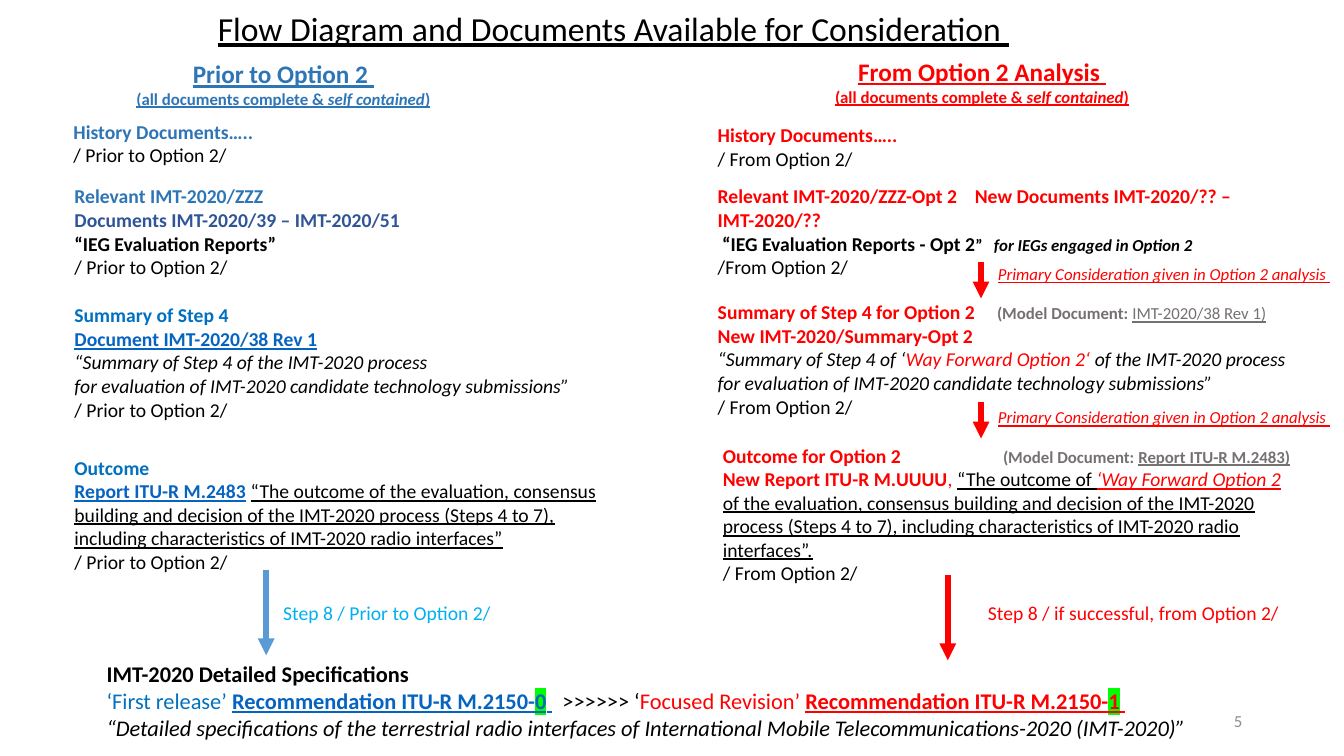
from lxml import etree
from pptx import Presentation
from pptx.dml.color import RGBColor
from pptx.enum.shapes import MSO_CONNECTOR
from pptx.enum.text import MSO_ANCHOR, MSO_AUTO_SIZE, PP_ALIGN
from pptx.oxml.ns import qn
from pptx.util import Pt

PX = 9144  # one px is a hundredth of an inch
LEFT, CENTER, RIGHT = PP_ALIGN.LEFT, PP_ALIGN.CENTER, PP_ALIGN.RIGHT
MIDDLE = MSO_ANCHOR.MIDDLE
GROW = MSO_AUTO_SIZE.SHAPE_TO_FIT_TEXT
STRAIGHT = MSO_CONNECTOR.STRAIGHT

BLACK, RED, GREY, PALE_GREY = "000000", "FF0000", "767171", "8C8C8C"
STEEL, NAVY, BLUE, LINK = "2E75B6", "2F5597", "0070C0", "0563C1"
SKY, ARROW_BLUE, GREEN = "00B0F0", "5B9BD5", "00FF00"

PRIOR = "/ Prior to Option 2/"
FROM = "/ From Option 2/"
MODEL = "\t(Model Document: "


def px(value):
    return value * PX


def rgb(code):
    return RGBColor.from_string(code)


def set_font(font, size=None, color=None, bold=None, italic=None, underline=None):
    if size:
        font.size = Pt(size)
    if color:
        font.color.rgb = rgb(color)
    if bold is not None:
        font.bold = bold
    if italic is not None:
        font.italic = italic
    if underline is not None:
        font.underline = underline


def highlight(span, code):
    """Mark a span whose font colour is already set."""
    fill = span._r.get_or_add_rPr().find(qn("a:solidFill"))
    mark = etree.Element(qn("a:highlight"))
    etree.SubElement(mark, qn("a:srgbClr"), val=code)
    fill.addnext(mark)


def set_tab(para, position):
    properties = para._p.get_or_add_pPr()
    stops = etree.Element(qn("a:tabLst"))
    etree.SubElement(stops, qn("a:tab"), pos=str(px(position)), algn="l")
    properties.insert(0, stops)


def line(*spans, tab=None, **style):
    """One paragraph: its style, its tab stop and spans of text or (text, style)."""
    return spans, tab, style


def fill_para(para, content, size, align):
    spans, tab, style = content
    para.alignment = align
    para.font.name = "Calibri"
    set_font(para.font, **{"size": size, "color": BLACK, **style})
    if tab:
        set_tab(para, tab)
    for item in spans:
        text, changes = (item, {}) if isinstance(item, str) else item
        changes = dict(changes)
        mark = changes.pop("mark", None)
        span = para.add_run()
        span.text = text
        set_font(span.font, **changes)
        if mark:
            highlight(span, mark)


def add_text(page, left, top, width, height, lines, size=14, align=LEFT, wrap=True):
    box = page.shapes.add_textbox(px(left), px(top), px(width), px(height))
    frame = box.text_frame
    frame.word_wrap = wrap
    frame.auto_size = GROW
    for index, content in enumerate(lines):
        para = frame.add_paragraph() if index else frame.paragraphs[0]
        fill_para(para, content, size, align)


def add_arrow(page, x, top, bottom, color):
    arrow = page.shapes.add_connector(STRAIGHT, px(x), px(top), px(x), px(bottom))
    arrow.line.color.rgb = rgb(color)
    arrow.line.width = Pt(4)
    etree.SubElement(arrow.line._get_or_add_ln(), qn("a:tailEnd"), type="triangle")
    etree.SubElement(arrow._element.spPr, qn("a:effectLst"))


def add_title(page, text):
    title = page.shapes.title
    title.left, title.top, title.width, title.height = map(px, (206, 2, 951, 57))
    title.text_frame.vertical_anchor = MIDDLE
    para = title.text_frame.paragraphs[0]
    para.line_spacing = 0.9
    fill_para(para, line(text, underline=True), 24, LEFT)


def add_heading(page, left, top, text, color):
    style = dict(color=color, bold=True, underline=True)
    add_text(page, left, top, 316, 61, [
        line(text, size=18, **style),
        line("(all documents complete & ", ("self contained", dict(italic=True)), ")",
             size=12, **style),
    ], align=CENTER, wrap=False)


def add_prior_column(page):
    add_heading(page, 123, 53, "Prior to Option 2 ", STEEL)
    add_text(page, 63, 114, 220, 57, [
        line("History Documents…..", color=STEEL, bold=True), line(PRIOR)])
    add_text(page, 64, 178, 485, 104, [
        line("Relevant IMT-2020/ZZZ", color=STEEL, bold=True),
        line("Documents IMT-2020/39 – IMT-2020/51", color=NAVY, bold=True),
        line("“IEG Evaluation Reports”", bold=True),
        line(PRIOR)])
    add_text(page, 64, 296, 557, 128, [
        line("Summary of Step 4", color=BLUE, bold=True),
        line("Document IMT-2020/38 Rev 1", color=LINK, bold=True, underline=True),
        line("“Summary of Step 4 of the IMT-2020 process", italic=True),
        line("for evaluation of IMT-2020 candidate technology submissions”", italic=True),
        line(PRIOR)])
    add_text(page, 64, 447, 557, 128, [
        line("Outcome", color=BLUE, bold=True),
        line(("Report ITU-R M.2483", dict(color=LINK, bold=True, underline=True)), " ",
             ("“The outcome of the evaluation, consensus building and decision of the "
              "IMT-2020 process (Steps 4 to 7), including characteristics of IMT-2020 "
              "radio interfaces”", dict(underline=True))),
        line(PRIOR)])
    add_arrow(page, 264, 565, 650, ARROW_BLUE)
    add_text(page, 271, 591, 228, 34,
             [line("Step 8 / Prior to Option 2/", color=SKY)], wrap=False)


def add_option_column(page):
    red_bold = dict(color=RED, bold=True)
    model = dict(size=12, color=GREY, bold=True)
    add_heading(page, 816, 51, "From Option 2 Analysis ", RED)
    add_text(page, 702, 117, 220, 57, [
        line("History Documents…..", **red_bold), line(FROM)])
    add_text(page, 702, 178, 540, 104, [
        line("Relevant IMT-2020/ZZZ-Opt 2\tNew Documents IMT-2020/?? – IMT-2020/??",
             tab=255, **red_bold),
        line(" “IEG Evaluation Reports - Opt 2", ("”\t", dict(size=12)),
             ("for IEGs engaged in Option 2", dict(size=12, italic=True)),
             tab=274, bold=True),
        line("/From Option 2/")])
    add_text(page, 702, 293, 602, 128, [
        line("Summary of Step 4 for Option 2", (MODEL, model),
             ("IMT-2020/38 Rev 1)", {**model, "bold": False, "underline": True}),
             tab=277, **red_bold),
        line("New IMT-2020/Summary-Opt 2", **red_bold),
        line("“Summary of Step 4 of ‘", ("Way Forward Option 2‘ ", dict(color=RED)),
             "of the IMT-2020 process for evaluation of IMT-2020 candidate technology "
             "submissions”", italic=True),
        line(FROM)])
    add_text(page, 707, 435, 591, 151, [
        line("Outcome for Option 2", (MODEL, model),
             ("Report ITU-R M.2483)", {**model, "underline": True}),
             tab=278, **red_bold),
        line(("New Report ITU-R M.UUUU", {**red_bold, "underline": False}),
             (", ", dict(color=RED, underline=False)), "“The outcome of ",
             ("‘Way Forward Option 2 ", dict(color=RED, italic=True)),
             "of the evaluation, consensus building and decision of the IMT-2020 process "
             "(Steps 4 to 7), including characteristics of IMT-2020 radio interfaces”.",
             underline=True),
        line(FROM)])
    # Arrows between the stages, each with its remark
    for arrow_top, remark_top in ((260, 257), (399, 399)):
        add_arrow(page, 973, arrow_top, arrow_top + 36, RED)
        add_text(page, 980, remark_top, 353, 30, [
            line("Primary Consideration given in Option 2 analysis ",
                 color=RED, italic=True, underline=True)], size=12, wrap=False)
    add_arrow(page, 940, 570, 655, RED)
    add_text(page, 970, 591, 311, 34,
             [line("Step 8 / if successful, from Option 2/", color=RED)], wrap=False)


def add_specifications(page):
    link = dict(color=LINK, bold=True, underline=True)
    revision = dict(color=RED, bold=True, underline=True)
    add_text(page, 96, 650, 1134, 90, [
        line("IMT-2020 Detailed Specifications", bold=True),
        line(("‘First release’ ", dict(color=BLUE)),
             ("Recommendation ITU-R M.2150-", link), ("0", {**link, "mark": GREEN}),
             (" ", link), "\t>>>>>> ‘", ("Focused Revision’ ", dict(color=RED)),
             ("Recommendation ITU-R M.2150-", revision),
             ("1", {**revision, "mark": GREEN}), (" ", revision), tab=452),
        line("“Detailed specifications of the terrestrial radio interfaces of "
             "International Mobile Telecommunications-2020 (IMT-2020)”", italic=True),
    ], size=16)


def main():
    deck = Presentation()
    deck.slide_width, deck.slide_height = px(1333), px(750)
    page = deck.slides.add_slide(deck.slide_layouts[5])
    add_title(page, "Flow Diagram and Documents Available for Consideration ")
    add_prior_column(page)
    add_option_column(page)
    add_specifications(page)
    # Page number
    add_text(page, 942, 700, 300, 30, [line("5", color=PALE_GREY)], size=12, align=RIGHT)
    deck.save("out.pptx")


if __name__ == "__main__":
    main()
